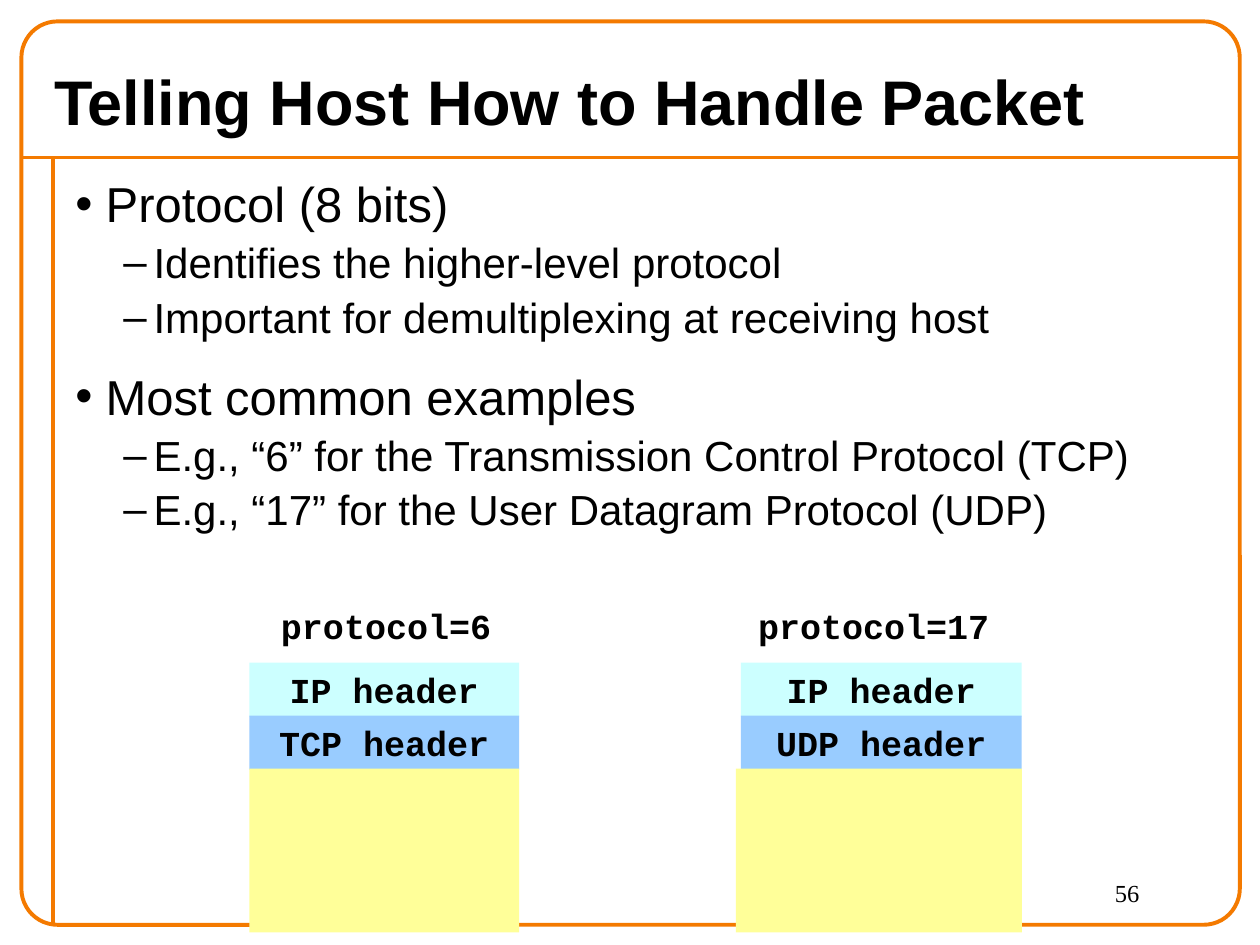
"""Build a slide on how the IP protocol field tells a host to handle a packet."""
from lxml import etree
from pptx import Presentation
from pptx.dml.color import RGBColor
from pptx.enum.shapes import MSO_CONNECTOR, MSO_SHAPE
from pptx.enum.text import MSO_ANCHOR, MSO_AUTO_SIZE, PP_ALIGN
from pptx.oxml.ns import qn
from pptx.util import Inches, Pt

STRAIGHT = MSO_CONNECTOR.STRAIGHT
RECTANGLE, ROUNDED = MSO_SHAPE.RECTANGLE, MSO_SHAPE.ROUNDED_RECTANGLE
LEFT, CENTER = PP_ALIGN.LEFT, PP_ALIGN.CENTER
TOP, MIDDLE = MSO_ANCHOR.TOP, MSO_ANCHOR.MIDDLE
FIXED, GROW = MSO_AUTO_SIZE.NONE, MSO_AUTO_SIZE.SHAPE_TO_FIT_TEXT
COLORS = {"frame": "F47A00", "text": "000000", "ip": "CCFFFF",
          "transport": "99CCFF", "payload": "FFFF99"}
RGB = {name: RGBColor.from_string(value) for name, value in COLORS.items()}
HEADER_FONT = {"name": "Courier New", "size": Pt(20), "bold": True}


def write(para, text, font, align=LEFT):
    para.alignment = align
    span = para.add_run()
    span.text = text
    for key, value in font.items():
        setattr(span.font, key, value)
    span.font.color.rgb = RGB["text"]


def add_box(left, top, width, height, wrap=True):
    box = page.shapes.add_textbox(Inches(left), Inches(top), Inches(width), Inches(height))
    box.text_frame.word_wrap = wrap
    return box.text_frame


deck = Presentation()
deck.slide_width, deck.slide_height = Inches(10), Inches(7.5)
page = deck.slides.add_slide(deck.slide_layouts[5])

for x1, y1, x2, y2 in [(0.17, 1.25, 9.83, 1.25), (0.42, 1.25, 0.42, 7.33)]:
    rule = page.shapes.add_connector(STRAIGHT, Inches(x1), Inches(y1), Inches(x2), Inches(y2))
    rule.line.color.rgb = RGB["frame"]
    rule.line.width = Pt(2.25)
    etree.SubElement(rule._element.spPr, qn("a:effectLst"))

frame = page.shapes.add_shape(ROUNDED, Inches(0.17), Inches(0.17), Inches(9.67), Inches(7.17))
frame.adjustments[0] = 0.04
frame.shadow.inherit = False
frame.fill.background()
frame.line.color.rgb = RGB["frame"]
frame.line.width = Pt(2.25)

number = add_box(8.75, 6.92, 1, 0.42)
write(number.paragraphs[0], "56", {"name": "Times New Roman", "size": Pt(14)})

title = page.shapes.title
title.left, title.top = Inches(0.33), Inches(0.42)
title.width, title.height = Inches(9.5), Inches(0.75)
title.text_frame.vertical_anchor = MIDDLE
title.text_frame.word_wrap = True
title.text_frame.auto_size = FIXED
write(title.text_frame.paragraphs[0], "Telling Host How to Handle Packet",
      {"name": "Arial", "size": Pt(36), "bold": True})

LEVELS = [{"size": 28, "margin": 0.24, "before": 14, "bullet": "•"},
          {"size": 24, "margin": 0.62, "before": 2.4, "bullet": "–"}]
POINTS = [
    (0, "Protocol (8 bits)"),
    (1, "Identifies the higher-level protocol"),
    (1, "Important for demultiplexing at receiving host"),
    (0, "Most common examples"),
    (1, "E.g., “6” for the Transmission Control Protocol (TCP)"),
    (1, "E.g., “17” for the User Datagram Protocol (UDP)"),
]
body = add_box(0.5, 1.33, 9.25, 3.13)
for index, (level, text) in enumerate(POINTS):
    para = body.add_paragraph() if index else body.paragraphs[0]
    style = LEVELS[level]
    para.level = level
    para.space_before = Pt(style["before"])
    write(para, text, {"name": "Arial", "size": Pt(style["size"])})
    properties = para._p.get_or_add_pPr()
    properties.set("marL", str(Inches(style["margin"])))
    properties.set("indent", str(Inches(-0.24)))
    etree.SubElement(properties, qn("a:buFont"), typeface="Arial")
    etree.SubElement(properties, qn("a:buChar"), char=style["bullet"])

PACKETS = [
    {"label": "protocol=6", "label_at": (2.01, 2.11), "transport": "TCP header",
     "header_at": (1.98, 2.14), "payload_at": (1.98, 2.14)},
    {"label": "protocol=17", "label_at": (5.88, 2.11), "transport": "UDP header",
     "header_at": (5.88, 2.23), "payload_at": (5.84, 2.27)},
]
for packet in PACKETS:
    layers = [("ip", "IP header", packet["header_at"], 5.26, 0.43),
              ("transport", packet["transport"], packet["header_at"], 5.68, 0.43),
              ("payload", "", packet["payload_at"], 6.1, 1.3)]
    for color, text, (left, width), top, height in layers:
        layer = page.shapes.add_shape(RECTANGLE, Inches(left), Inches(top),
                                      Inches(width), Inches(height))
        layer.shadow.inherit = False
        layer.fill.solid()
        layer.fill.fore_color.rgb = RGB[color]
        layer.line.fill.background()
        layer.text_frame.vertical_anchor = TOP
        if text:
            write(layer.text_frame.paragraphs[0], text, HEADER_FONT, CENTER)
    left, width = packet["label_at"]
    label = add_box(left, 4.75, width, 0.43, wrap=False)
    label.auto_size = GROW
    write(label.paragraphs[0], packet["label"], HEADER_FONT, CENTER)

deck.save("out.pptx")
